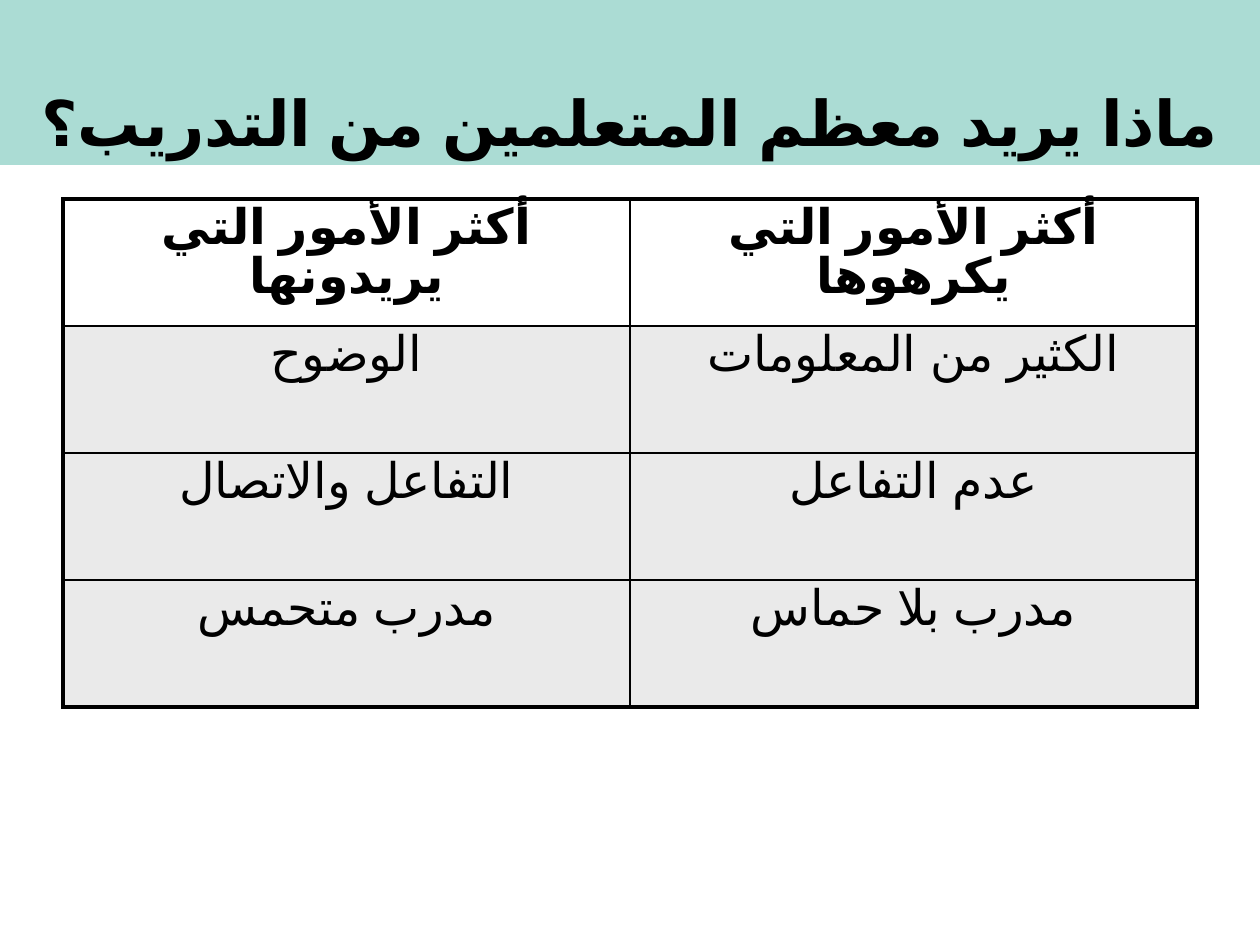
from dataclasses import dataclass
from lxml.etree import SubElement
from pptx import Presentation
from pptx.dml.color import RGBColor as RGB
from pptx.enum.lang import MSO_LANGUAGE_ID as LANG
from pptx.enum.shapes import MSO_SHAPE as SHAPE
from pptx.enum.text import MSO_ANCHOR as ANCHOR, PP_ALIGN as ALIGN
from pptx.oxml.ns import qn
from pptx.util import Inches, Pt


@dataclass(frozen=True)
class Theme:
    font: str = "Arial"
    ink: str = "000000"
    band: str = "ABDCD4"
    header: str = "FFFFFF"
    body: str = "EAEAEA"
    title_size: int = 36
    cell_size: int = 28
    outer: float = 2.25
    inner: float = 1


def write(tf, text, size, bold):
    p = tf.paragraphs[0]
    r = p.add_run()
    r.text = text
    r.font.language_id = LANG.ARABIC
    p.alignment = ALIGN.CENTER
    p.font.name = theme.font
    p.font.size = Pt(size)
    p.font.bold = bold
    p.font.color.rgb = RGB.from_string(theme.ink)
    pPr = p._p.get_or_add_pPr()
    pPr.set("rtl", "1")
    SubElement(pPr.find(qn("a:defRPr")), qn("a:cs"), typeface=theme.font)
    return p


def add_border(cell, side, width):
    ln = SubElement(cell._tc.get_or_add_tcPr(), qn(f"a:ln{side}"), w=str(Pt(width)))
    fill = SubElement(ln, qn("a:solidFill"))
    SubElement(fill, qn("a:srgbClr"), val=theme.ink)


theme = Theme()
rows = [
    ("أكثر الأمور التي يريدونها", "أكثر الأمور التي يكرهوها"),
    ("الوضوح", "الكثير من المعلومات"),
    ("التفاعل والاتصال", "عدم التفاعل"),
    ("مدرب متحمس", "مدرب بلا حماس"),
]

prs = Presentation()
prs.slide_width, prs.slide_height = Inches(10), Inches(7.5)
s = prs.slides.add_slide(prs.slide_layouts[6])

n_rows, n_cols = len(rows), len(rows[0])
table = s.shapes.add_table(
    n_rows, n_cols, Inches(0.5), Inches(1.58), Inches(9), Inches(4.03)
).table
for i, row in enumerate(rows):
    for j, text in enumerate(row):
        cell = table.cell(i, j)
        p = write(cell.text_frame, text, theme.cell_size, i == 0)
        p.line_spacing = 0.9
        edges = {"L": j == 0, "R": j == n_cols - 1, "T": i == 0, "B": i == n_rows - 1}
        for side, is_outer in edges.items():
            add_border(cell, side, theme.outer if is_outer else theme.inner)
        cell.fill.solid()
        cell.fill.fore_color.rgb = RGB.from_string(theme.body if i else theme.header)

sp = s.shapes.add_shape(SHAPE.RECTANGLE, 0, 0, prs.slide_width, Inches(1.31))
sp.shadow.inherit = False
sp.fill.solid()
sp.fill.fore_color.rgb = RGB.from_string(theme.band)
sp.line.fill.background()
tf = sp.text_frame
tf.word_wrap = True
tf.vertical_anchor = ANCHOR.BOTTOM
write(tf, "ماذا يريد معظم المتعلمين من التدريب؟", theme.title_size, True)

prs.save("out.pptx")
